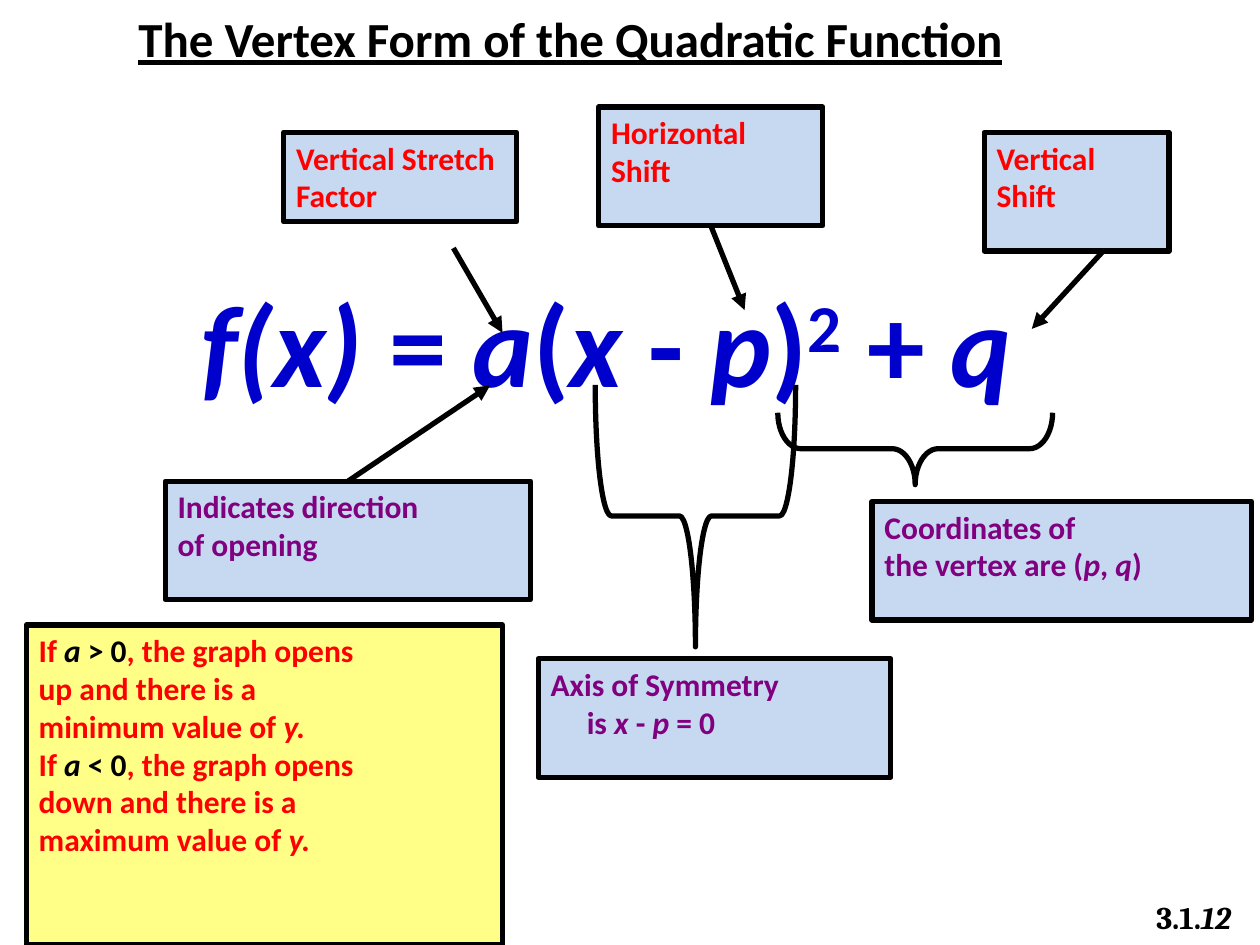
from lxml.etree import SubElement
from pptx import Presentation
from pptx.dml.color import RGBColor
from pptx.enum.shapes import MSO_CONNECTOR, MSO_SHAPE
from pptx.enum.text import MSO_ANCHOR, PP_ALIGN
from pptx.oxml.ns import qn
from pptx.util import Cm, Pt

BLACK = RGBColor(0, 0, 0)
WHITE = RGBColor(0xFF, 0xFF, 0xFF)
RED = RGBColor(0xFF, 0, 0)
PURPLE = RGBColor(0x80, 0, 0x80)
BLUE = RGBColor(0, 0, 0xCC)
PALE_BLUE = RGBColor(0xC6, 0xD9, 0xF1)
YELLOW = RGBColor(0xFF, 0xFF, 0x87)
STROKE = Pt(3)


def write(tf, lines, size, color, name="Calibri"):
    """Each line is a list of plain strings and (text, flags) pairs.

    Flags: i italic, k black, s superscript.
    """
    tf.word_wrap = True
    tf.vertical_anchor = MSO_ANCHOR.TOP
    for i, line in enumerate(lines):
        p = tf.add_paragraph() if i else tf.paragraphs[0]
        p.alignment = PP_ALIGN.LEFT
        font = p.font
        font.name, font.size, font.bold = name, Pt(size), True
        font.color.rgb = color
        for part in line:
            text, flags = (part, "") if isinstance(part, str) else part
            r = p.add_run()
            r.text = text
            if "i" in flags:
                r.font.italic = True
            if "k" in flags:
                r.font.color.rgb = BLACK
            if "s" in flags:
                r._r.get_or_add_rPr().set("baseline", "30000")


def add_panel(slide, box, fill, lines, color):
    sp = slide.shapes.add_shape(MSO_SHAPE.RECTANGLE, *map(Cm, box))
    sp.shadow.inherit = False
    sp.fill.solid()
    sp.fill.fore_color.rgb = fill
    sp.line.color.rgb = BLACK
    sp.line.width = STROKE
    write(sp.text_frame, lines, 18, color)
    return sp


def add_callout(slide, box, lines, color):
    return add_panel(slide, box, PALE_BLUE, lines, color)


def add_arrow(slide, start, end):
    cxn = slide.shapes.add_connector(MSO_CONNECTOR.STRAIGHT, *map(Cm, start + end))
    cxn.line.color.rgb = BLACK
    cxn.line.width = STROKE
    SubElement(cxn.line._get_or_add_ln(), qn("a:tailEnd"), type="triangle")
    SubElement(cxn._element.spPr, qn("a:effectLst"))
    return cxn


def add_under_brace(slide, box, curve):
    """Turn a left brace so that it opens upward and fills the box."""
    x, y, w, h = box
    shift = (w - h) / 2
    sp = slide.shapes.add_shape(
        MSO_SHAPE.LEFT_BRACE, Cm(x + shift), Cm(y - shift), Cm(h), Cm(w))
    sp.rotation = 270
    sp.adjustments[0] = curve
    sp.shadow.inherit = False
    sp.fill.background()
    sp.line.color.rgb = BLACK
    sp.line.width = STROKE


def add_title(slide, box):
    tf = slide.shapes.add_textbox(*map(Cm, box)).text_frame
    write(tf, [["The Vertex Form of the Quadratic Function"]], 28, BLACK)
    tf.paragraphs[0].font.underline = True


def add_formula(slide, box):
    tf = slide.shapes.add_textbox(*map(Cm, box)).text_frame
    write(tf, [[("f(x)", "i"), " = ", ("a", "i"), "(", ("x", "i"), " - ",
                ("p", "i"), ")", ("2", "s"), " + ", ("q", "i")]], 66, BLUE)


def add_opening_note(slide, box):
    lines = []
    for sign, way, extreme in ((">", "up", "minimum"), ("<", "down", "maximum")):
        lines += [
            ["If ", ("a", "ik"), (f" {sign} 0", "k"), ", the graph opens"],
            [f"{way} and there is a"],
            [f"{extreme} value of ", ("y.", "i")],
        ]
    add_panel(slide, box, YELLOW, lines, RED)


def add_page_number(slide, box):
    sp = slide.shapes.add_shape(MSO_SHAPE.RECTANGLE, *map(Cm, box))
    sp.shadow.inherit = False
    sp.fill.solid()
    sp.fill.fore_color.rgb = WHITE
    clr = sp._element.spPr.find(qn("a:solidFill"))[0]
    SubElement(clr, qn("a:alpha"), val="50000")
    sp.line.fill.background()
    write(sp.text_frame, [["3.1.", ("12", "i")]], 18, BLACK, "Cambria")


def add_shift_callouts(slide):
    add_callout(slide, (5.72, 2.67, 4.7, 1.8),
                [["Vertical Stretch"], ["Factor"]], RED)
    add_arrow(slide, (9.14, 5.0), (10.13, 6.71))
    horizontal = add_callout(slide, (12.07, 2.16, 4.52, 2.39),
                             [["Horizontal"], ["Shift"]], RED)
    arrow = add_arrow(slide, (14.33, 4.55), (15.01, 6.25))
    arrow.begin_connect(horizontal, 2)
    add_callout(slide, (19.84, 2.67, 3.73, 2.39),
                [["Vertical"], ["Shift"]], RED)
    add_arrow(slide, (22.25, 5.05), (20.8, 6.63))


def add_graph_callouts(slide):
    direction = add_callout(slide, (3.33, 9.7, 7.37, 2.39),
                            [["Indicates direction"], ["of opening"]], PURPLE)
    arrow = add_arrow(slide, (7.02, 9.7), (9.88, 7.77))
    arrow.begin_connect(direction, 0)
    add_callout(slide, (17.58, 10.11, 7.65, 2.39),
                [["Coordinates of"],
                 ["the vertex are (", ("p", "i"), ", ", ("q", "i"), ")"]], PURPLE)
    add_under_brace(slide, (15.68, 8.32, 5.54, 1.45), 0.32)
    axis = add_callout(slide, (10.85, 13.28, 7.11, 2.39),
                       [["Axis of Symmetry"],
                        ["is ", ("x", "i"), " - ", ("p", "i"), " = 0"]], PURPLE)
    pPr = axis.text_frame.paragraphs[1]._p.get_or_add_pPr()
    pPr.set("marL", str(Cm(0.73)))
    add_under_brace(slide, (12.0, 7.76, 4.04, 5.28), 0.08)


def main():
    prs = Presentation()
    prs.slide_width, prs.slide_height = Cm(25.4), Cm(19.05)
    slide = prs.slides.add_slide(prs.slide_layouts[6])
    add_formula(slide, (3.81, 5.36, 17.91, 3.05))
    add_shift_callouts(slide)
    add_graph_callouts(slide)
    add_opening_note(slide, (0.53, 12.6, 9.6, 6.45))
    add_title(slide, (2.54, 0.05, 18.16, 1.45))
    add_page_number(slide, (23.06, 17.98, 2.11, 1.02))
    prs.save("out.pptx")


if __name__ == "__main__":
    main()
